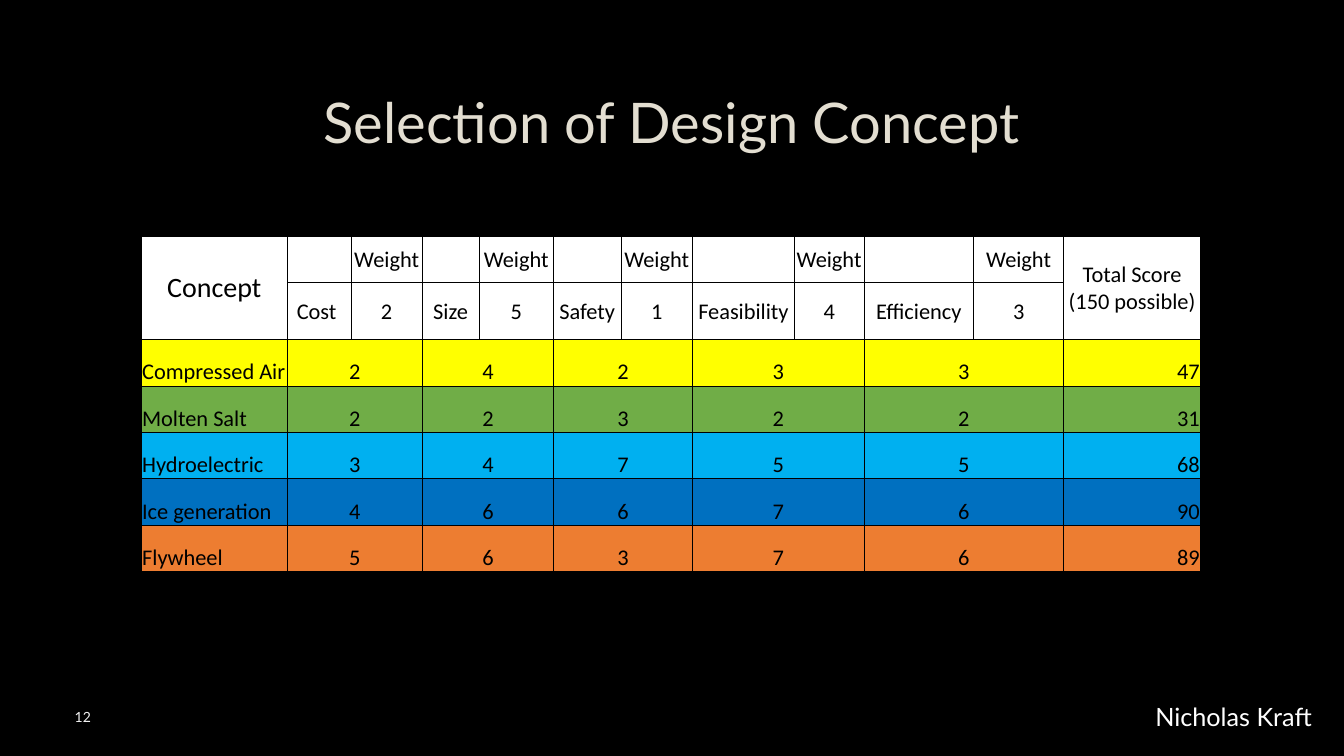
from itertools import product

from lxml.etree import SubElement
from pptx import Presentation
from pptx.dml.color import RGBColor
from pptx.enum.text import MSO_ANCHOR as Anchor, PP_ALIGN as Align
from pptx.oxml import parse_xml
from pptx.oxml.ns import nsdecls, qn
from pptx.util import Inches, Pt

GRID_COLUMNS, GRID_ROWS = 1333, 750
CRITERIA = [("Cost ", 2), ("Size", 5), ("Safety", 1), ("Feasibility", 4), ("Efficiency", 3)]
CONCEPTS = [
    ("Compressed Air", "FFFF00", (2, 4, 2, 3, 3)),
    ("Molten Salt", "70AD47", (2, 2, 3, 2, 2)),
    ("Hydroelectric", "00B0F0", (3, 4, 7, 5, 5)),
    ("Ice generation", "0070C0", (4, 6, 6, 7, 6)),
    ("Flywheel", "ED7D31", (5, 6, 3, 7, 6)),
]
COLUMN_WIDTHS = [145, 63, 71, 56, 74, 67, 71, 101, 69, 109, 89, 136]
ROW_HEIGHTS = [46, 57] + [46] * len(CONCEPTS)


def grid(units):
    """Turn grid units, a hundredth of an inch each, into a length."""
    return Inches(units / 100)


def paint(colour_format, colour):
    """Apply a hex colour to a font colour or a fill."""
    colour_format.rgb = RGBColor.from_string(colour)


def write(frame, text, size, face, colour, align, anchor):
    """Put one evenly formatted paragraph in a text frame."""
    paragraph = frame.paragraphs[0]
    paragraph.text = text
    paragraph.alignment = align
    paragraph.font.size, paragraph.font.name = Pt(size), face
    paint(paragraph.font.color, colour)
    frame.vertical_anchor = anchor
    frame.word_wrap = True


def add_title(slide, text):
    """Place the slide title with its faint letter outline."""
    title = slide.shapes.title
    title.left, title.top, title.width, title.height = map(grid, (100, 67, 1132, 106))
    write(title.text_frame, text, 40, "Lato", "E3DED1", Align.CENTER, Anchor.MIDDLE)
    letters = title.text_frame.paragraphs[0].runs[0].font._element
    outline = SubElement(letters, qn("a:ln"), w=str(Pt(0.75)))
    solid = SubElement(outline, qn("a:solidFill"))
    shade = SubElement(solid, qn("a:srgbClr"), val="404040")
    SubElement(shade, qn("a:alpha"), val="10000")


def add_label(slide, area, text, size, colour, align, anchor):
    """Add a text box at the bottom of the slide."""
    label = slide.shapes.add_textbox(*map(grid, area))
    write(label.text_frame, text, size, "Lato", colour, align, anchor)


def rule_cell(cell):
    """Draw thin black borders around a cell."""
    properties = cell._tc.get_or_add_tcPr()
    for position, side in enumerate("LRTB"):
        properties.insert(position, parse_xml(
            f'<a:ln{side} {nsdecls("a")} w="{Pt(0.5)}"><a:solidFill>'
            f'<a:srgbClr val="000000"/></a:solidFill></a:ln{side}>'))


def fill_cell(cell, text, fill, size=16, align=Align.CENTER, anchor=Anchor.MIDDLE):
    """Write, colour and rule one table cell."""
    cell.margin_left = cell.margin_right = cell.margin_top = grid(1)
    cell.margin_bottom = 0
    write(cell.text_frame, text, size, "Calibri", "000000", align, anchor)
    cell.vertical_anchor = anchor
    cell.fill.solid()
    paint(cell.fill.fore_color, fill)
    rule_cell(cell)


def header_texts():
    """Return the two header rows of the matrix."""
    upper, lower = ["Concept"], [""]
    for criterion, weight in CRITERIA:
        upper += ["", "Weight"]
        lower += [criterion, str(weight)]
    return [upper + ["Total Score (150 possible)"], lower + [""]]


def concept_texts(concept, scores):
    """Return a concept's row, ending in its weighted total."""
    total = sum(score * weight for score, (_, weight) in zip(scores, CRITERIA))
    spread = [text for score in scores for text in (str(score), "")]
    return [concept, *spread, str(total)]


def add_matrix(slide):
    """Add the weighted decision matrix."""
    size = len(ROW_HEIGHTS), len(COLUMN_WIDTHS)
    area = 140, 234, sum(COLUMN_WIDTHS), sum(ROW_HEIGHTS)
    matrix = slide.shapes.add_table(*size, *map(grid, area)).table
    matrix.first_row = matrix.horz_banding = False
    for column, width in zip(matrix.columns, COLUMN_WIDTHS):
        column.width = grid(width)
    for row, height in zip(matrix.rows, ROW_HEIGHTS):
        row.height = grid(height)

    last = len(COLUMN_WIDTHS) - 1
    for row, texts in enumerate(header_texts()):
        for column, text in enumerate(texts):
            fill_cell(matrix.cell(row, column), text, "FFFFFF", 20 if column == 0 else 16)
    for row, (concept, fill, scores) in enumerate(CONCEPTS, 2):
        for column, text in enumerate(concept_texts(concept, scores)):
            align = {0: Align.LEFT, last: Align.RIGHT}.get(column, Align.CENTER)
            fill_cell(matrix.cell(row, column), text, fill, align=align, anchor=Anchor.BOTTOM)

    for column in (0, last):
        matrix.cell(0, column).merge(matrix.cell(1, column))
    for row, column in product(range(2, len(ROW_HEIGHTS)), range(1, last, 2)):
        matrix.cell(row, column).merge(matrix.cell(row, column + 1))


def main():
    """Build and save the slide."""
    deck = Presentation()
    deck.slide_width, deck.slide_height = grid(GRID_COLUMNS), grid(GRID_ROWS)
    slide = deck.slides.add_slide(deck.slide_layouts[5])
    slide.background.fill.solid()
    paint(slide.background.fill.fore_color, "000000")
    add_title(slide, "Selection of Design Concept")
    add_matrix(slide)
    add_label(slide, (1136, 691, 182, 40), "Nicholas Kraft", 18, "FFFFFF", Align.LEFT, Anchor.TOP)
    add_label(slide, (18, 691, 82, 40), "12", 10, "F2F2F2", Align.RIGHT, Anchor.MIDDLE)
    deck.save("out.pptx")


if __name__ == "__main__":
    main()
